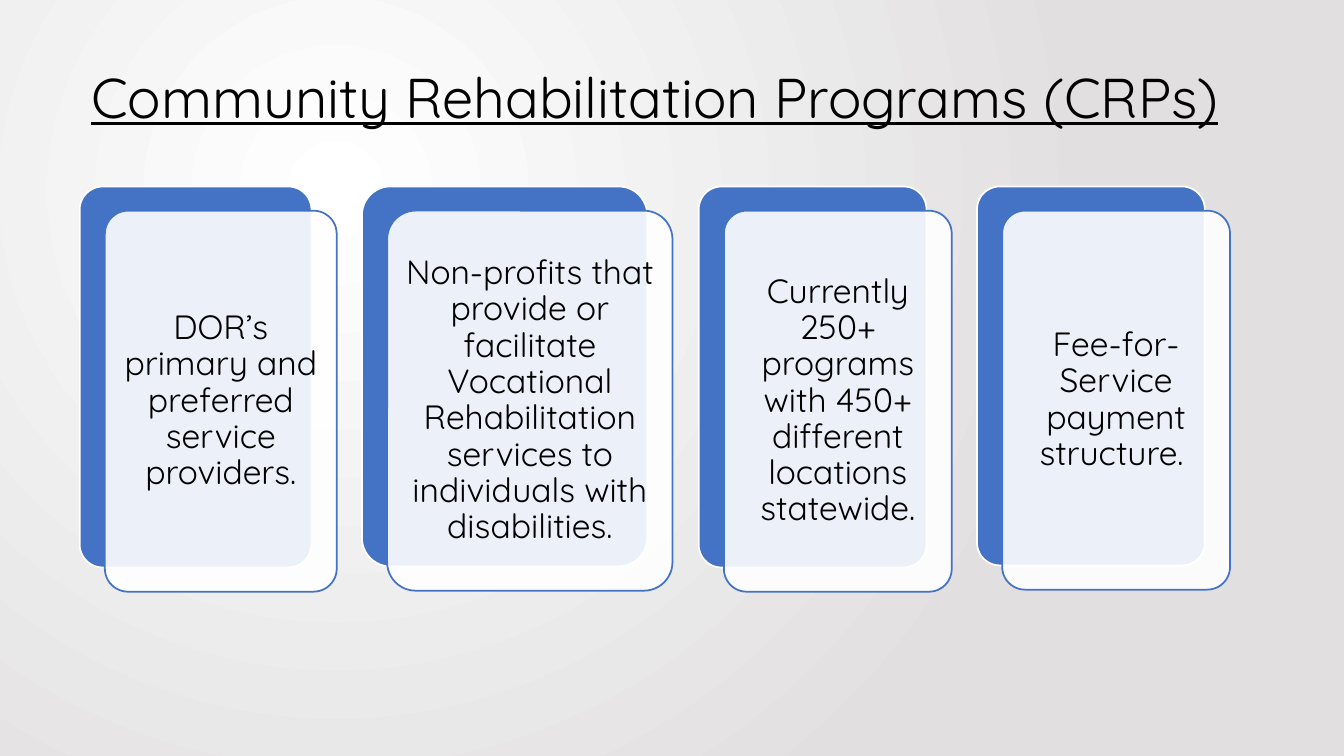
from lxml import etree
from pptx import Presentation
from pptx import util as u
from pptx.dml.color import RGBColor
from pptx.enum import shapes, text
from pptx.oxml.ns import qn

BLUE, WHITE, BLACK, GREY = "4472C4", "FFFFFF", "000000", "E1DFDF"
CARD_TOP, SHIFT_X, SHIFT_Y = 1.85, 0.25, 0.24
CORNER = 0.1
# Part of a corner radius that lies outside the text area
CORNER_INSET = 0.293

# Left, width, height, wording
CARDS = [
    (0.79, 2.3, 3.78, "DOR’s primary and preferred service providers."),
    (3.59, 2.83, 3.77, "Non-profits that provide or facilitate Vocational "
     "Rehabilitation services to individuals with disabilities."),
    (6.93, 2.26, 3.78, "Currently 250+ programs with 450+ different "
     "locations statewide."),
    (9.69, 2.26, 3.76, "Fee-for-Service payment structure. "),
]


def rgb(value):
    return RGBColor.from_string(value)


class Deck:
    font = "Quicksand"

    def __init__(self, width, height):
        self.prs = Presentation()
        self.prs.slide_width = u.Inches(width)
        self.prs.slide_height = u.Inches(height)
        self.s = self.prs.slides.add_slide(self.prs.slide_layouts[6])

    def background(self, inner, outer):
        """Radial gradient centred on the upper left quarter."""
        fill = self.s.background.fill
        fill.gradient()
        for stop, color, pos in zip(fill.gradient_stops, (inner, outer), (0, 1)):
            stop.color.rgb = rgb(color)
            stop.position = pos
        grad = self.s.element.find(".//" + qn("a:gradFill"))
        grad.remove(grad.find(qn("a:lin")))
        circle = etree.Element(qn("a:path"), path="circle")
        etree.SubElement(circle, qn("a:fillToRect"),
                         l="50000", t="50000", r="100000", b="100000")
        grad.find(qn("a:gsLst")).addnext(circle)

    def panel(self, x, y, w, h, fill, line, opacity=100):
        sp = self.s.shapes.add_shape(
            shapes.MSO_SHAPE.ROUNDED_RECTANGLE,
            u.Inches(x), u.Inches(y), u.Inches(w), u.Inches(h))
        sp.adjustments[0] = CORNER
        sp.shadow.inherit = False
        sp.fill.solid()
        sp.fill.fore_color.rgb = rgb(fill)
        sp.line.color.rgb = rgb(line)
        sp.line.width = u.Pt(1.25)
        if opacity < 100:
            color = sp.fill._xPr.find(qn("a:solidFill"))[0]
            etree.SubElement(color, qn("a:alpha"), val=str(opacity * 1000))

    def label(self, x, y, w, h, words, size, anchor, inset=None, underline=None):
        tf = self.s.shapes.add_textbox(
            u.Inches(x), u.Inches(y), u.Inches(w), u.Inches(h)).text_frame
        tf.word_wrap = True
        tf.vertical_anchor = anchor
        if inset is not None:
            tf.margin_left = tf.margin_right = u.Inches(inset)
            tf.margin_top = tf.margin_bottom = u.Inches(inset)
        p = tf.paragraphs[0]
        p.alignment = text.PP_ALIGN.CENTER
        p.line_spacing = 0.9
        r = p.add_run()
        r.text = words
        r.font.name = self.font
        r.font.size = u.Pt(size)
        r.font.color.rgb = rgb(BLACK)
        r.font.underline = underline

    def card(self, x, w, h, words):
        self.panel(x, CARD_TOP, w, h, BLUE, WHITE)
        x, y = x + SHIFT_X, CARD_TOP + SHIFT_Y
        self.panel(x, y, w, h, WHITE, BLUE, opacity=90)
        gap = CORNER * min(w, h) * CORNER_INSET
        self.label(x + gap, y + gap, w - 2 * gap, h - 2 * gap, words, 24,
                   text.MSO_ANCHOR.MIDDLE, inset=0.1)


def main():
    deck = Deck(13.33, 7.5)
    deck.background(WHITE, GREY)

    # Title
    deck.label(0.2, 0.35, 12.59, 0.99, "Community Rehabilitation Programs (CRPs)",
               40, text.MSO_ANCHOR.BOTTOM, underline=True)

    # Row of cards
    for card in CARDS:
        deck.card(*card)

    deck.prs.save("out.pptx")


if __name__ == "__main__":
    main()
